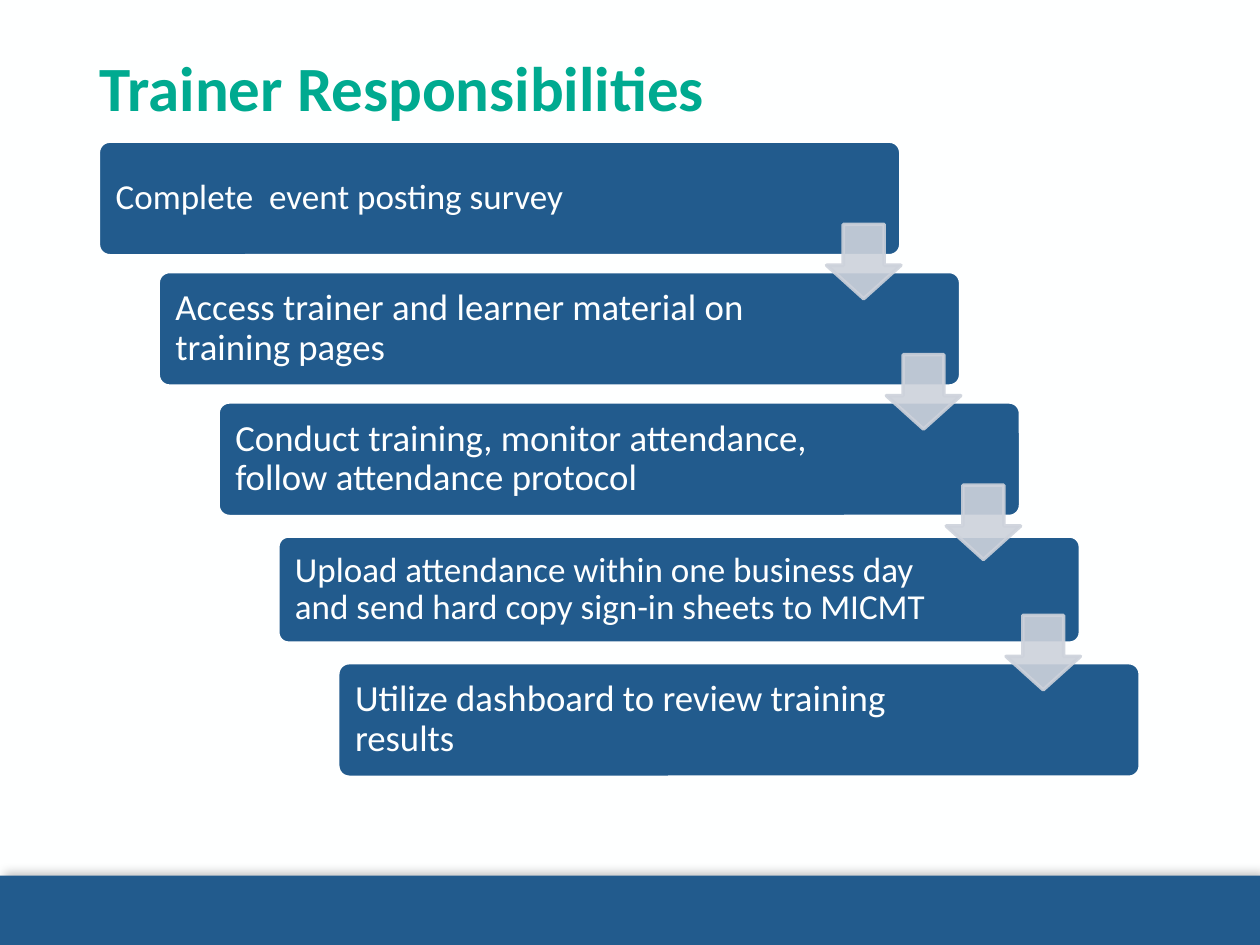
from dataclasses import dataclass

from lxml.etree import SubElement
from pptx import Presentation
from pptx.dml.color import RGBColor as RGB
from pptx.enum.shapes import MSO_SHAPE as Shape
from pptx.enum.text import MSO_ANCHOR as Anchor, PP_ALIGN as Align
from pptx.oxml.ns import qn
from pptx.util import Pt


@dataclass(frozen=True)
class Theme:
    blue: RGB = RGB.from_string("225B8D")
    green: RGB = RGB.from_string("00AA90")
    white: RGB = RGB.from_string("FEFFFF")
    gray: RGB = RGB.from_string("CDD2DB")
    font: str = "Calibri"
    title: float = 36
    step: float = 21
    step_small: float = 20


@dataclass(frozen=True)
class Step:
    text: str
    size: float = Theme.step
    height: float = 65.5


THEME = Theme()
STEPS = [
    Step("Complete  event posting survey", THEME.step_small),
    Step("Access trainer and learner material on training pages"),
    Step("Conduct training, monitor attendance, follow attendance protocol"),
    Step("Upload attendance within one business day and send hard copy "
         "sign-in sheets to MICMT", THEME.step_small, 61.2),
    Step("Utilize dashboard to review training results"),
]

# Staircase geometry in points
WIDTH, HEIGHT = 720, 540
LEFT, FIRST_MIDDLE = 56.2, 113.4
STEP_X, STEP_Y = 34.2, 74.5
BOX_W, ARROW = 458.6, 42.5
FIRST_ARROW_TOP = 128.2
FOOTER_H = 39.6


def set_attrs(obj, values: dict) -> None:
    for name, value in values.items():
        setattr(obj, name, value)


def add_shape(s, kind, x: float, y: float, w: float, h: float,
              fill: RGB, line: RGB | None = None):
    sp = s.shapes.add_shape(kind, Pt(x), Pt(y), Pt(w), Pt(h))
    sp.shadow.inherit = False
    sp.fill.solid()
    sp.fill.fore_color.rgb = fill
    if line is None:
        sp.line.fill.background()
    else:
        sp.line.color.rgb = line
        sp.line.width = Pt(2)
    return sp


def write(sp, text: str, size: float, color: RGB, bold: bool, frame: dict) -> None:
    tf = sp.text_frame
    set_attrs(tf, {"word_wrap": True, **frame})
    p = tf.paragraphs[0]
    set_attrs(p, {"alignment": Align.LEFT, "line_spacing": 0.9})
    r = p.add_run()
    r.text = text
    set_attrs(r.font, {"name": THEME.font, "size": Pt(size), "bold": bold})
    r.font.color.rgb = color


def add_alpha(color, percent: int) -> None:
    SubElement(color, qn("a:alpha"), val=str(percent * 1000))


def add_footer(s) -> None:
    sp = add_shape(s, Shape.RECTANGLE, 0, HEIGHT - FOOTER_H, WIDTH, FOOTER_H,
                   THEME.blue)
    effects = sp._element.spPr.find(qn("a:effectLst"))
    shadow = SubElement(effects, qn("a:outerShdw"), blurRad=str(Pt(6)),
                        dist=str(Pt(3)), dir=str(315 * 60000), rotWithShape="0")
    add_alpha(SubElement(shadow, qn("a:srgbClr"), val="000000"), 24)


def add_title(s, text: str) -> None:
    sp = s.shapes.title
    set_attrs(sp, {"left": Pt(49.7), "top": Pt(28.8),
                   "width": Pt(620.6), "height": Pt(104.4)})
    write(sp, text, THEME.title, THEME.green, True,
          {"vertical_anchor": Anchor.TOP})


def add_step(s, i: int, step: Step) -> None:
    top = FIRST_MIDDLE + i * STEP_Y - step.height / 2
    sp = add_shape(s, Shape.ROUNDED_RECTANGLE, LEFT + i * STEP_X, top,
                   BOX_W, step.height, THEME.blue, THEME.white)
    sp.adjustments[0] = 0.1
    write(sp, step.text, step.size, THEME.white, False,
          {"vertical_anchor": Anchor.MIDDLE, "margin_left": Pt(8),
           "margin_right": Pt(85), "margin_top": Pt(8),
           "margin_bottom": Pt(8)})


def add_arrow(s, i: int) -> None:
    # Each arrow lines up with the right edge of the box it leaves
    sp = add_shape(s, Shape.DOWN_ARROW, LEFT + i * STEP_X + BOX_W - ARROW,
                   FIRST_ARROW_TOP + i * STEP_Y, ARROW, ARROW,
                   THEME.gray, THEME.gray)
    sp.adjustments[0], sp.adjustments[1] = 0.55, 0.45
    for color in sp._element.spPr.iter(qn("a:srgbClr")):
        add_alpha(color, 90)


def main() -> None:
    prs = Presentation()
    prs.slide_width, prs.slide_height = Pt(WIDTH), Pt(HEIGHT)
    s = prs.slides.add_slide(prs.slide_layouts[5])
    s.background.fill.solid()
    s.background.fill.fore_color.rgb = THEME.white

    # Frame of the slide
    add_footer(s)
    add_title(s, "Trainer Responsibilities")

    # Staircase, with the arrows on top
    for i, step in enumerate(STEPS):
        add_step(s, i, step)
    for i in range(len(STEPS) - 1):
        add_arrow(s, i)

    prs.save("out.pptx")


if __name__ == "__main__":
    main()
